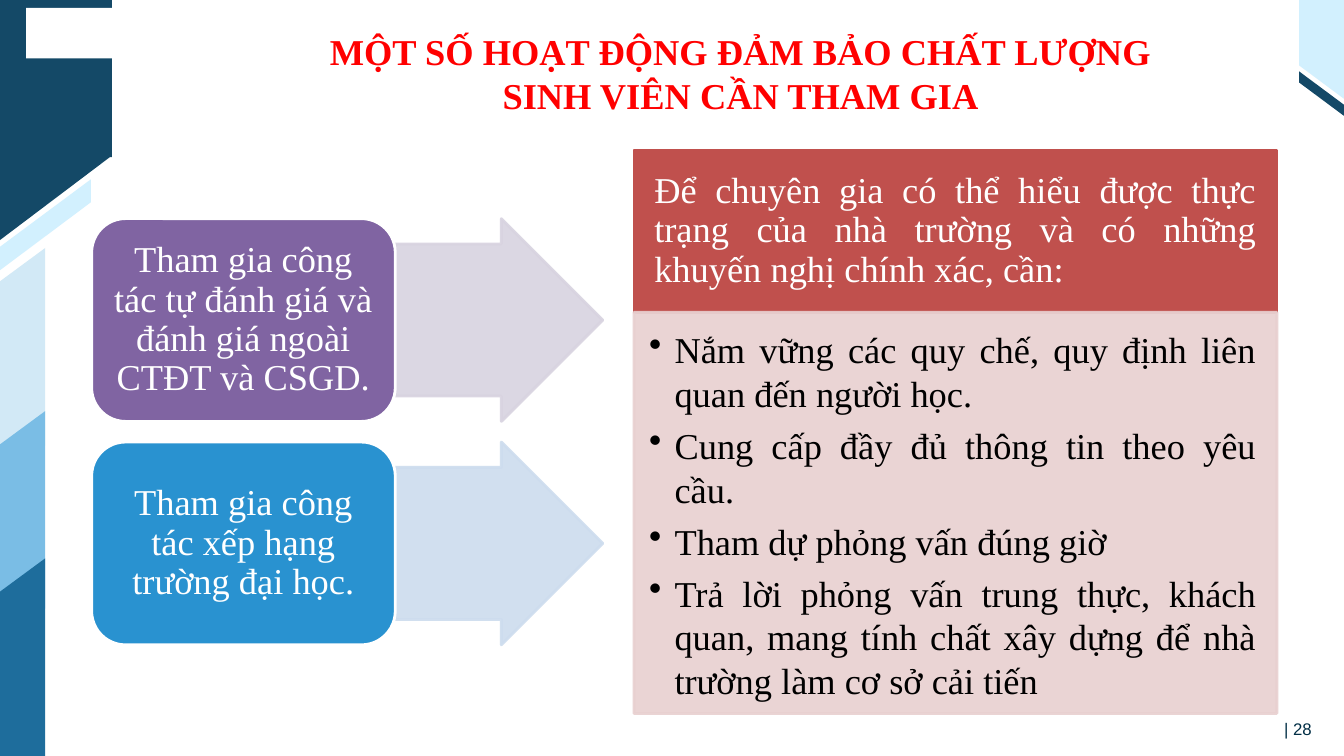
from lxml.etree import SubElement
from pptx import Presentation
from pptx.dml.color import RGBColor
from pptx.enum.shapes import MSO_SHAPE as Shape
from pptx.enum.text import MSO_ANCHOR as Anchor, MSO_AUTO_SIZE as AutoSize, PP_ALIGN as Align
from pptx.oxml.ns import qn
from pptx.util import Cm, Pt

WHITE = RGBColor(0xFF, 0xFF, 0xFF)
BLACK = RGBColor(0, 0, 0)
RED = RGBColor(0xFF, 0, 0)
NAVY = RGBColor(0x14, 0x49, 0x67)
NUMBER_INK = RGBColor(0x01, 0x2E, 0x45)
ICE = RGBColor(0xD2, 0xF0, 0xFE)
BAND_COLORS = (RGBColor(0xD2, 0xE9, 0xF6), RGBColor(0x7A, 0xBD, 0xE5), RGBColor(0x1E, 0x6D, 0x9C))
PURPLE, LILAC = RGBColor(0x80, 0x64, 0xA2), RGBColor(0xD8, 0xD3, 0xE0)
BLUE, PALE_BLUE = RGBColor(0x29, 0x92, 0xD0), RGBColor(0xCD, 0xDC, 0xEE)
BRICK, PINK = RGBColor(0xC0, 0x50, 0x4D), RGBColor(0xE8, 0xD0, 0xD0)

SLIDE_W, SLIDE_H = 33.87, 19.05
SERIF = "Times New Roman"
BODY_SIZE = 26

ACTIVITIES = (
    ("Tham gia công tác tự đánh giá và đánh giá ngoài CTĐT và CSGD.", PURPLE, LILAC),
    ("Tham gia công tác xếp hạng trường đại học.", BLUE, PALE_BLUE),
)
ADVICE = "Để chuyên gia có thể hiểu được thực trạng của nhà trường và có những khuyến nghị chính xác, cần:"
DUTIES = (
    "Nắm vững các quy chế, quy định liên quan đến người học.",
    "Cung cấp đầy đủ thông tin theo yêu cầu.",
    "Tham dự phỏng vấn đúng giờ",
    "Trả lời phỏng vấn trung thực, khách quan, mang tính chất xây dựng "
    "để nhà trường làm cơ sở cải tiến",
)


def set_font(paragraph, color, size=BODY_SIZE, name=SERIF, bold=False):
    font = paragraph.font
    font.name, font.size, font.bold = name, Pt(size), bold
    font.color.rgb = color


def set_frame(frame, insets, anchor=Anchor.TOP):
    frame.word_wrap = True
    frame.auto_size = AutoSize.NONE
    frame.vertical_anchor = anchor
    frame.margin_left, frame.margin_top, frame.margin_right, frame.margin_bottom = map(Cm, insets)


def paint(shape, fill, line=None, opacity=100):
    shape.shadow.inherit = False
    shape.fill.solid()
    shape.fill.fore_color.rgb = fill
    if line is None:
        shape.line.fill.background()
    else:
        shape.line.color.rgb = line
        shape.line.width = Pt(2)
    if opacity < 100:
        for color in shape._element.spPr.iter(qn("a:srgbClr")):
            SubElement(color, qn("a:alpha"), val=str(opacity * 1000))


def add_block(slide, kind, box, fill, line=None, opacity=100):
    block = slide.shapes.add_shape(kind, *map(Cm, box))
    paint(block, fill, line, opacity)
    return block


def add_polygon(slide, points, fill):
    corners = [(Cm(x), Cm(y)) for x, y in points]
    builder = slide.shapes.build_freeform(*corners[0])
    builder.add_line_segments(corners[1:], close=True)
    paint(builder.convert_to_shape(), fill)


def add_left_ornament(slide, band_w):
    add_polygon(slide, [(0, 0), (2.82, 0), (2.82, 3.96), (2.77, 3.96), (0, 6.05)], NAVY)
    add_polygon(slide, [(2.29, 4.52), (2.29, 5.1), (0, 6.81), (0, 6.22)], ICE)
    add_block(slide, Shape.RECTANGLE, (0.66, 0.2, 4.55, 1.27), WHITE)
    # Slanted bands down the edge
    for top, color in zip((6.25, 10.36, 14.07), BAND_COLORS):
        bottom = top + 4.98
        add_polygon(slide, [(band_w, top), (band_w, bottom), (0, bottom), (0, top + 0.84)], color)


def add_right_ornament(slide, left, right):
    add_polygon(slide, [(left, 1.8), (left, 2.08), (right, 2.92), (right, 2.64)], NAVY)
    add_polygon(slide, [(left, 0), (right, 0), (right, 2.49), (left, 1.65)], ICE)


def add_title(slide, left, top, width, height):
    title = slide.shapes.title
    title.left, title.top, title.width, title.height = map(Cm, (left, top, width, height))
    set_frame(title.text_frame, (0.25, 0.13, 0.25, 0.13))
    title.text_frame.text = "MỘT SỐ HOẠT ĐỘNG ĐẢM BẢO CHẤT LƯỢNG\vSINH VIÊN CẦN THAM GIA"
    heading = title.text_frame.paragraphs[0]
    heading.alignment = Align.CENTER
    set_font(heading, RED, bold=True)


def add_page_number(slide, left, top, width, height):
    number = slide.shapes.add_textbox(*map(Cm, (left, top, width, height))).text_frame
    set_frame(number, (0.18, 0.13, 0.25, 0.13))
    number.text = "| 28"
    set_font(number.paragraphs[0], NUMBER_INK, 12, "Arial")


def add_activity(slide, left, top, width, height, activity):
    wording, color, tint = activity
    label_w = width * 0.594
    arrow = add_block(slide, Shape.RIGHT_ARROW, (left + label_w, top, width - label_w, height),
                      tint, tint, 90)
    arrow.adjustments[0] = 0.75
    arrow.adjustments[1] = 0.5
    label = add_block(slide, Shape.ROUNDED_RECTANGLE, (left, top, label_w, height), color, WHITE)
    set_frame(label.text_frame, (0.28, 0.13, 0.28, 0.13), Anchor.MIDDLE)
    label.text_frame.text = wording
    paragraph = label.text_frame.paragraphs[0]
    paragraph.alignment = Align.CENTER
    paragraph.line_spacing = 0.9
    set_font(paragraph, WHITE)


def add_duty(paragraph, duty):
    paragraph.text = duty
    paragraph.level = 1
    paragraph.alignment = Align.JUSTIFY
    paragraph.space_after = Pt(6)
    props = paragraph._p.get_or_add_pPr()
    props.set("marL", str(Cm(0.64)))
    props.set("indent", str(-Cm(0.64)))
    SubElement(SubElement(props, qn("a:buClr")), qn("a:srgbClr"), val=str(BLACK))
    SubElement(props, qn("a:buChar"), char="•")
    set_font(paragraph, BLACK)


def add_advice_panel(slide, left, top, width, height):
    header_h = 4.09
    # Header
    header = add_block(slide, Shape.RECTANGLE, (left, top, width, header_h), BRICK, BRICK)
    set_frame(header.text_frame, (0.51, 0.3, 0.51, 0.3), Anchor.MIDDLE)
    header.text_frame.text = ADVICE
    advice = header.text_frame.paragraphs[0]
    advice.alignment = Align.JUSTIFY
    advice.line_spacing = 0.9
    set_font(advice, WHITE)
    # Bulleted duties
    body = add_block(slide, Shape.RECTANGLE, (left, top + header_h, width, height - header_h),
                     PINK, PINK, 90)
    set_frame(body.text_frame, (0.38, 0.38, 0.51, 0.58))
    for index, duty in enumerate(DUTIES):
        add_duty(body.text_frame.add_paragraph() if index else body.text_frame.paragraphs[0], duty)


def main():
    deck = Presentation()
    deck.slide_width, deck.slide_height = Cm(SLIDE_W), Cm(SLIDE_H)
    slide = deck.slides.add_slide(deck.slide_layouts[5])
    add_left_ornament(slide, 1.14)
    add_right_ornament(slide, 32.74, SLIDE_W)
    add_page_number(slide, 32.18, 17.98, 1.69, 0.76)
    add_title(slide, 6.48, 0.61, 24.38, 3.17)
    for row, activity in enumerate(ACTIVITIES):
        add_activity(slide, 2.31, 5.51 + row * 5.63, 12.88, 5.11, activity)
    add_advice_panel(slide, 15.98, 3.78, 16.2, 14.2)
    deck.save("out.pptx")


if __name__ == "__main__":
    main()
